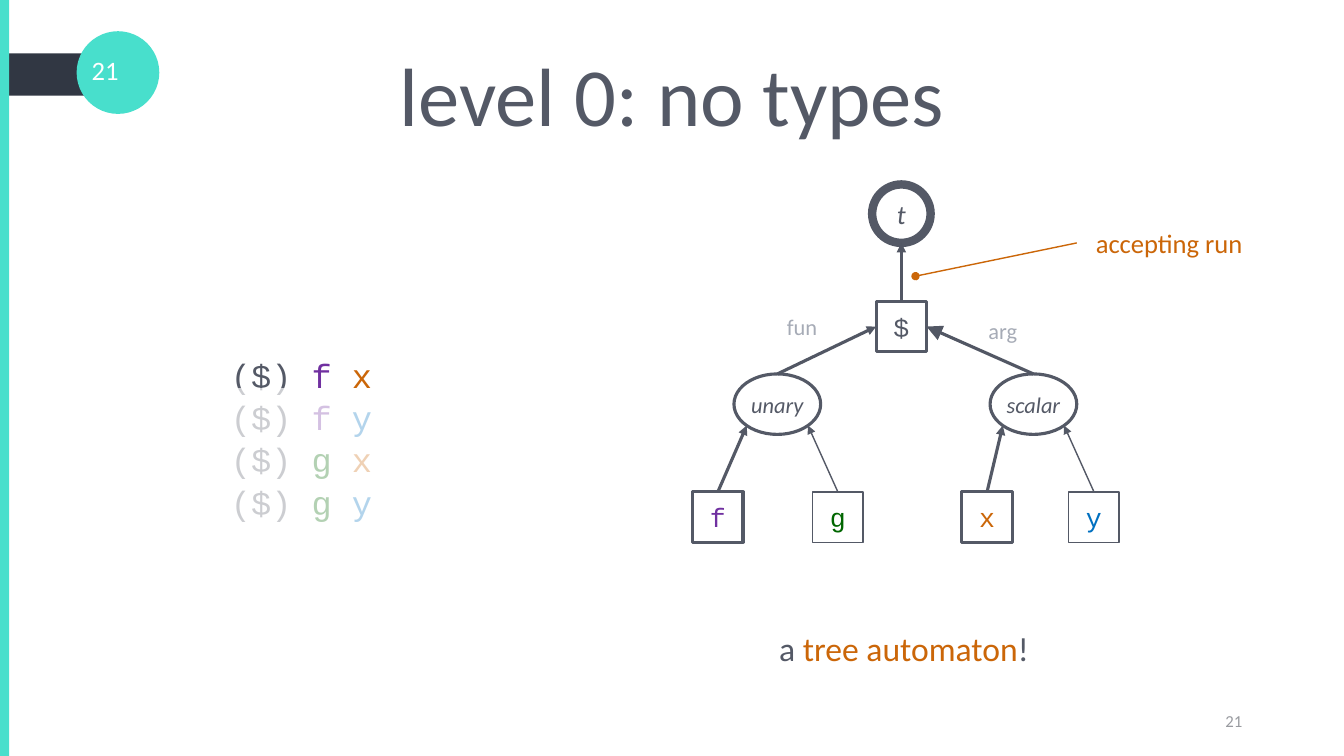
from dataclasses import dataclass

from lxml.etree import SubElement
from pptx import Presentation
from pptx.dml.color import RGBColor
from pptx.enum.shapes import MSO_CONNECTOR, MSO_SHAPE
from pptx.enum.text import MSO_ANCHOR, PP_ALIGN
from pptx.oxml.ns import qn
from pptx.util import Inches, Pt

COLOURS = {
    "ink": "545966", "edge": "525764", "navy": "313743", "teal": "48DFCC",
    "white": "FFFFFF", "orange": "CB6608", "purple": "7030A0",
    "green": "006600", "blue": "0070C0", "label": "A6ABB6", "footer": "999BA0",
}
SANS, MONO = "Calibri", "Courier New"
PAGE_NUMBER = "21"
THIN, THICK = 1, 2.25
LEAF_SIDE, LEAF_TOP = 0.5, 4.88
STATE_WIDTH, STATE_HEIGHT, STATE_TOP = 0.86, 0.6, 3.71
APPLY_LEFT, APPLY_TOP = 8.69, 2.99
SYMBOL_COLOURS = {"f": "purple", "g": "green", "x": "orange", "y": "blue"}


@dataclass(frozen=True)
class Span:
    text: str
    colour: str = "ink"


@dataclass(frozen=True)
class Leaf:
    symbol: str
    left: float
    weight: float


@dataclass(frozen=True)
class State:
    name: str
    left: float
    leaves: tuple[Leaf, Leaf]
    apply_side: float
    head_size: str


@dataclass(frozen=True)
class Note:
    spans: tuple[Span, ...]
    place: tuple[float, float, float, float]
    size: float
    align: PP_ALIGN = PP_ALIGN.LEFT
    anchor: MSO_ANCHOR = MSO_ANCHOR.TOP


STATES = (
    State("unary", 7.28, (Leaf("f", 6.87, THICK), Leaf("g", 8.06, THIN)), APPLY_LEFT, "med"),
    State("scalar", 9.82, (Leaf("x", 9.54, THICK), Leaf("y", 10.6, THIN)),
          APPLY_LEFT + LEAF_SIDE, "lg"),
)
NOTES = (
    Note((Span(PAGE_NUMBER, "white"),), (0.81, 0.49, 0.88, 0.4), 19),
    Note((Span(PAGE_NUMBER, "footer"),), (9.42, 6.95, 3, 0.4), 12,
         PP_ALIGN.RIGHT, MSO_ANCHOR.MIDDLE),
    Note((Span("fun", "label"),), (7.59, 3.06, 0.73, 0.37), 16, PP_ALIGN.CENTER),
    Note((Span("arg", "label"),), (9.58, 3.1, 0.73, 0.37), 16, PP_ALIGN.CENTER),
    Note((Span("a "), Span("tree automaton", "orange"), Span("!")),
         (7.63, 6.18, 3.28, 0.5), 24),
    Note((Span("accepting run", "orange"),), (10.77, 2.2, 1.81, 0.4), 19),
)


def rgb(name: str) -> RGBColor:
    return RGBColor.from_string(COLOURS[name])


def write(box, *lines: tuple[Span, ...], size: float, font: str = SANS,
          italic: bool = False, align=PP_ALIGN.CENTER, anchor=MSO_ANCHOR.MIDDLE,
          margin: float | None = None, spacing: float | None = None) -> None:
    """Fill a shape with one paragraph per line of coloured spans."""
    frame = box.text_frame
    frame.word_wrap = True
    frame.vertical_anchor = anchor
    if margin is not None:
        frame.margin_left = frame.margin_right = Inches(margin)
        frame.margin_top = frame.margin_bottom = Inches(margin)
    for index, spans in enumerate(lines):
        para = frame.add_paragraph() if index else frame.paragraphs[0]
        para.alignment = align
        para.line_spacing = spacing
        for span in spans:
            run = para.add_run()
            run.text = span.text
            run.font.name = font
            run.font.size = Pt(size)
            run.font.italic = italic
            run.font.color.rgb = rgb(span.colour)


def add_text(page, place: tuple[float, ...], *lines: tuple[Span, ...], **text_format):
    box = page.shapes.add_textbox(*map(Inches, place))
    write(box, *lines, **text_format)
    return box


def add_block(page, kind: MSO_SHAPE, place: tuple[float, ...], fill: str = "white",
              weight: float = 0):
    box = page.shapes.add_shape(kind, *map(Inches, place))
    box.shadow.inherit = False
    box.fill.solid()
    box.fill.fore_color.rgb = rgb(fill)
    if weight:
        box.line.color.rgb = rgb("ink")
        box.line.width = Pt(weight)
    else:
        box.line.fill.background()
    return box


def add_arrow(page, start: tuple[float, float], end: tuple[float, float],
              colour: str = "ink", weight: float = THICK, head: str = "triangle",
              head_size: str = "med") -> None:
    arrow = page.shapes.add_connector(MSO_CONNECTOR.STRAIGHT, *map(Inches, start + end))
    arrow.line.color.rgb = rgb(colour)
    arrow.line.width = Pt(weight)
    SubElement(arrow.line._get_or_add_ln(), qn("a:tailEnd"),
               type=head, w=head_size, len=head_size)
    SubElement(arrow._element.spPr, qn("a:effectLst"))


def add_symbol(page, symbol: str, left: float, top: float, weight: float) -> None:
    box = add_block(page, MSO_SHAPE.RECTANGLE, (left, top, LEAF_SIDE, LEAF_SIDE),
                    weight=weight)
    write(box, (Span(symbol, SYMBOL_COLOURS.get(symbol, "ink")),), size=19, font=MONO)


def add_state(page, name: str, place: tuple[float, ...], weight: float, size: float) -> None:
    box = add_block(page, MSO_SHAPE.OVAL, place, weight=weight)
    write(box, (Span(name),), size=size, italic=True, margin=0)


def add_branch(page, state: State) -> None:
    """Draw a state, its two leaves and the arrows up to the $ node."""
    add_state(page, state.name, (state.left, STATE_TOP, STATE_WIDTH, STATE_HEIGHT), THICK, 16)
    diagonal = 0.5 ** 0.5 / 2
    for leaf, side in zip(state.leaves, (-1, 1)):
        add_symbol(page, leaf.symbol, leaf.left, LEAF_TOP, leaf.weight)
        rim = (state.left + STATE_WIDTH * (0.5 + side * diagonal),
               STATE_TOP + STATE_HEIGHT * (0.5 + diagonal))
        add_arrow(page, (leaf.left + LEAF_SIDE / 2, LEAF_TOP), rim, weight=leaf.weight)
    add_arrow(page, (state.left + STATE_WIDTH / 2, STATE_TOP),
              (state.apply_side, APPLY_TOP + LEAF_SIDE / 2), "edge",
              head_size=state.head_size)


def add_tree(page) -> None:
    for state in STATES:
        add_branch(page, state)
    add_symbol(page, "$", APPLY_LEFT, APPLY_TOP, THICK)
    add_state(page, "t", (8.65, 1.83, 0.58, 0.58), 6, 19)
    middle = APPLY_LEFT + LEAF_SIDE / 2
    add_arrow(page, (middle, APPLY_TOP), (middle, 2.41), "edge")
    add_arrow(page, (10.68, 2.41), (9.08, 2.74), "orange", THIN, "oval")


def add_programs(page) -> None:
    """List every program and fade all but the first."""
    programs = [(Span("($) "), Span(f"{function} ", SYMBOL_COLOURS[function]),
                 Span(argument, SYMBOL_COLOURS[argument]))
                for function in "fg" for argument in "xy"]
    add_text(page, (1.1, 3.45, 3.78, 1.72), *programs, size=24, font=MONO,
             anchor=MSO_ANCHOR.TOP, spacing=1.05)
    veil = add_block(page, MSO_SHAPE.RECTANGLE, (1.24, 3.85, 4.25, 1.83))
    colour = veil._element.spPr.find(qn("a:solidFill")).find(qn("a:srgbClr"))
    SubElement(colour, qn("a:alpha"), val="70000")


def main() -> None:
    deck = Presentation()
    deck.slide_width, deck.slide_height = Inches(13.33), Inches(7.5)
    page = deck.slides.add_slide(deck.slide_layouts[5])
    add_block(page, MSO_SHAPE.RECTANGLE, (0.01, 0.53, 1.1, 0.42), "navy")
    add_block(page, MSO_SHAPE.OVAL, (0.76, 0.31, 0.82, 0.82), "teal")
    add_block(page, MSO_SHAPE.RECTANGLE, (0, 0, 0.09, 7.5), "teal")
    title = page.shapes.title
    title.left, title.top, title.width, title.height = map(Inches, (0.67, 0.3, 12, 1.25))
    write(title, (Span("level 0: no types"),), size=59)
    add_tree(page)
    for note in NOTES:
        add_text(page, note.place, note.spans, size=note.size, align=note.align,
                 anchor=note.anchor)
    add_programs(page)
    deck.save("out.pptx")


if __name__ == "__main__":
    main()
